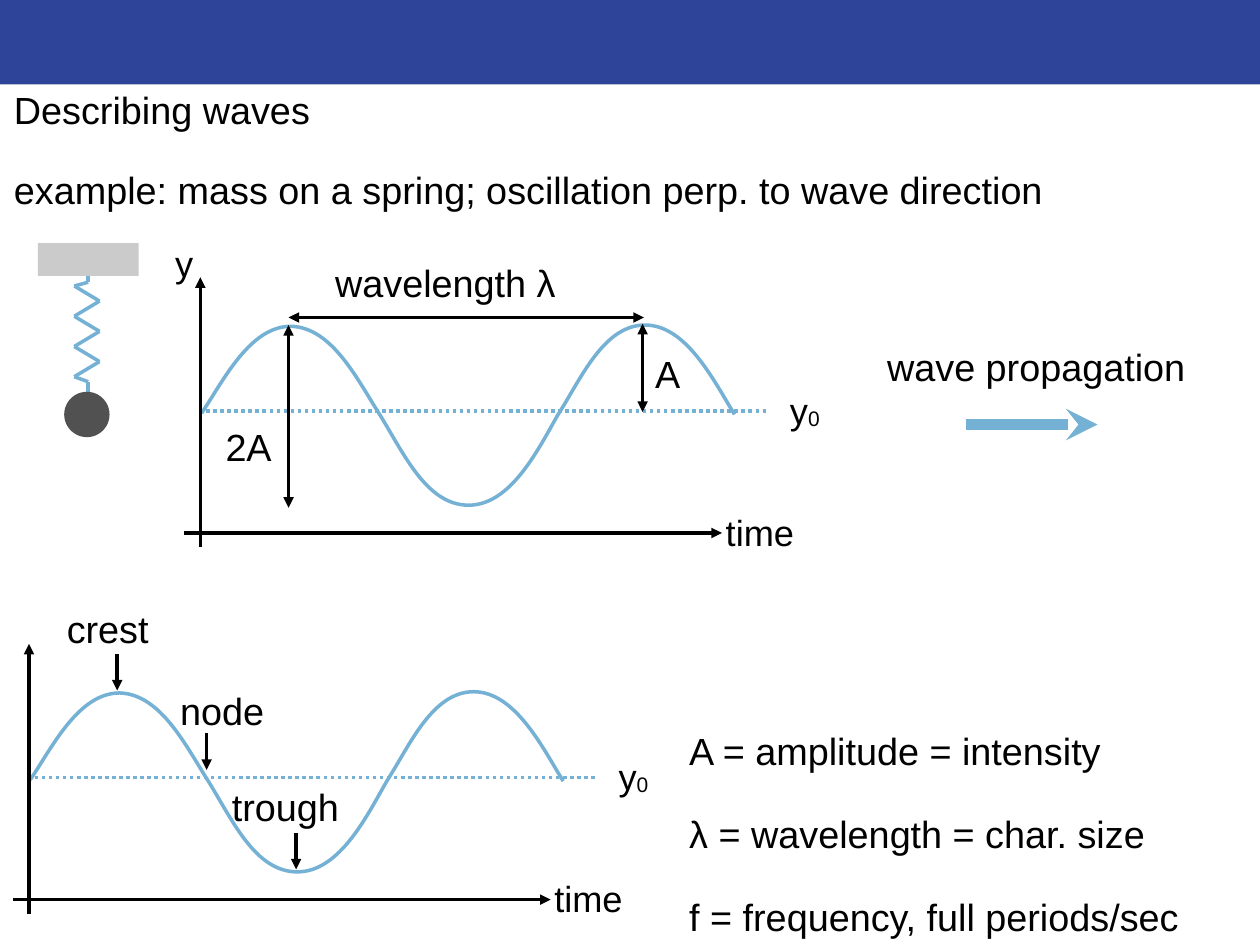
from dataclasses import dataclass
from itertools import pairwise

from lxml.etree import SubElement
from pptx import Presentation
from pptx.dml.color import RGBColor
from pptx.enum.dml import MSO_LINE
from pptx.enum.shapes import MSO_CONNECTOR, MSO_SHAPE
from pptx.enum.text import MSO_ANCHOR, MSO_AUTO_SIZE, PP_ALIGN
from pptx.oxml.ns import qn
from pptx.util import Inches, Pt

BLACK = RGBColor(0x00, 0x00, 0x00)
NAVY = RGBColor(0x2E, 0x44, 0x99)
SKY = RGBColor(0x75, 0xB1, 0xD4)
DARK_GREY = RGBColor(0x51, 0x51, 0x51)
LIGHT_GREY = RGBColor(0xCB, 0xCB, 0xCB)
FONT = "Arial"
TEXT_SIZE = 21.6
AXIS_SIZE = 20.7
WAVE = [
    (0.01, 1.08), (0.18, 0.83), (0.39, 0.39), (0.72, 0.39),
    (1.05, 0.40), (1.25, 0.82), (1.43, 1.10),
    (1.62, 1.41), (1.80, 1.81), (2.13, 1.81),
    (2.47, 1.81), (2.69, 1.35), (2.84, 1.09),
    (3.02, 0.81), (3.20, 0.38), (3.53, 0.38),
    (3.86, 0.38), (4.08, 0.83), (4.24, 1.09),
]


@dataclass
class Label:
    text: str
    left: float
    top: float
    width: float
    height: float = 0.44
    size: float = TEXT_SIZE
    subscript: str = ""
    gap: float = 0


@dataclass
class Arrow:
    start: tuple[float, float]
    end: tuple[float, float]
    color: RGBColor = BLACK
    width: float = 2
    head: str = ""
    tail: str = ""
    dash: MSO_LINE | None = None


@dataclass
class Marker:
    label: Label
    tip: tuple[float, float]


def format_text(frame, size: float, gap: float = 0) -> None:
    frame.margin_left = frame.margin_right = Inches(0.04)
    frame.margin_top = frame.margin_bottom = Inches(0.04)
    frame.vertical_anchor = MSO_ANCHOR.MIDDLE
    for index, paragraph in enumerate(frame.paragraphs):
        paragraph.alignment = PP_ALIGN.LEFT
        paragraph.space_before = Pt(gap if index else 0)
        for run in paragraph.runs:
            run.font.name = FONT
            run.font.size = Pt(size)
            run.font.color.rgb = BLACK


def draw_label(slide, label: Label) -> None:
    box = slide.shapes.add_textbox(
        Inches(label.left), Inches(label.top), Inches(label.width), Inches(label.height)
    )
    frame = box.text_frame
    frame.text = label.text
    frame.word_wrap = False
    frame.auto_size = MSO_AUTO_SIZE.SHAPE_TO_FIT_TEXT
    if label.subscript:
        subscript = frame.paragraphs[0].add_run()
        subscript.text = label.subscript
        subscript._r.get_or_add_rPr().set("baseline", "-6000")
    format_text(frame, label.size, label.gap)


def draw_arrow(slide, arrow: Arrow) -> None:
    connector = slide.shapes.add_connector(
        MSO_CONNECTOR.STRAIGHT, *(Inches(v) for v in (*arrow.start, *arrow.end))
    )
    line = connector.line
    line.color.rgb = arrow.color
    line.width = Pt(arrow.width)
    if arrow.dash is not None:
        line.dash_style = arrow.dash
    properties = connector._element.spPr
    outline = properties.find(qn("a:ln"))
    for tag, kind in (("a:headEnd", arrow.head), ("a:tailEnd", arrow.tail)):
        if kind:
            SubElement(outline, qn(tag)).set("type", kind)
    SubElement(properties, qn("a:effectLst"))


def draw_block(slide, kind: MSO_SHAPE, left: float, top: float,
               width: float, height: float, color: RGBColor) -> None:
    block = slide.shapes.add_shape(
        kind, Inches(left), Inches(top), Inches(width), Inches(height)
    )
    block.fill.solid()
    block.fill.fore_color.rgb = color
    block.line.fill.background()
    block.shadow.inherit = False


def draw_wave(slide, left: float, top: float) -> None:
    start, *controls = [(Inches(left + x), Inches(top + y)) for x, y in WAVE]
    builder = slide.shapes.build_freeform(*start)
    builder.add_line_segments(controls, close=False)
    wave = builder.convert_to_shape()
    segments = list(wave._element.iter(qn("a:lnTo")))
    outline = segments[0].getparent()
    for first in range(0, len(segments), 3):
        curve = SubElement(outline, qn("a:cubicBezTo"))
        for segment in segments[first:first + 3]:
            curve.append(segment[0])
            outline.remove(segment)
    wave.fill.background()
    wave.line.color.rgb = SKY
    wave.line.width = Pt(2)
    wave.shadow.inherit = False


def draw_graph(slide, left: float, top: float) -> None:
    draw_wave(slide, left, top)
    rest_y, time_y = top + 1.06, top + 2.03
    draw_arrow(slide, Arrow((left - 0.01, rest_y), (left + 4.51, rest_y), SKY,
                            dash=MSO_LINE.ROUND_DOT))
    draw_arrow(slide, Arrow((left, top), (left, top + 2.14), head="triangle"))
    draw_arrow(slide, Arrow((left + 4.14, time_y), (left - 0.13, time_y), head="triangle"))
    draw_label(slide, Label("time", left + 4.13, top + 1.81, 0.66, 0.42, AXIS_SIZE))
    draw_label(slide, Label("y", left + 4.64, top + 0.84, 0.33, 0.42, AXIS_SIZE, "0"))


def draw_spring(slide) -> None:
    zigzag = [(0.79 if turn % 2 else 0.59, 2.27 + turn * 0.12) for turn in range(7)]
    spring = [(0.7, 2.14), (0.7, 2.24), *zigzag, (0.7, 3.03), (0.7, 3.13)]
    for start, end in pairwise(spring):
        draw_arrow(slide, Arrow(start, end, SKY))
    draw_block(slide, MSO_SHAPE.OVAL, 0.51, 3.11, 0.36, 0.36, DARK_GREY)
    draw_block(slide, MSO_SHAPE.RECTANGLE, 0.3, 1.93, 0.8, 0.26, LIGHT_GREY)


def main() -> None:
    deck = Presentation()
    deck.slide_width, deck.slide_height = Inches(10), Inches(7.5)
    slide = deck.slides.add_slide(deck.slide_layouts[5])
    draw_block(slide, MSO_SHAPE.RECTANGLE, -0.01, 0, 10.02, 0.67, NAVY)

    title = slide.shapes.title
    title.left, title.top = Inches(0.07), Inches(0.64)
    title.width, title.height = Inches(9.83), Inches(1.09)
    heading = title.text_frame
    heading.text = (
        "Describing waves\nexample: mass on a spring; oscillation perp. to wave direction"
    )
    heading.word_wrap = True
    heading.auto_size = MSO_AUTO_SIZE.NONE
    format_text(heading, TEXT_SIZE, 20.2)

    draw_spring(slide)
    draw_graph(slide, 1.59, 2.2)
    draw_graph(slide, 0.23, 5.11)

    for start, end in (
        ((2.29, 2.58), (2.29, 4.03)),
        ((5.1, 2.57), (5.1, 3.27)),
        ((2.29, 2.52), (5.11, 2.52)),
    ):
        draw_arrow(slide, Arrow(start, end, head="triangle", tail="triangle"))

    for marker in (
        Marker(Label("crest", 0.49, 4.77, 0.77), (0.93, 5.48)),
        Marker(Label("node", 1.39, 5.42, 0.77), (1.64, 6.11)),
        Marker(Label("trough", 1.8, 6.18, 0.97), (2.35, 6.9)),
    ):
        x, y = marker.tip
        draw_arrow(slide, Arrow(marker.tip, (x, y - 0.29), head="triangle"))
        draw_label(slide, marker.label)

    definitions = "\n".join((
        "A = amplitude = intensity",
        "λ = wavelength = char. size",
        "f = frequency, full periods/sec",
    ))
    for label in (
        Label("y", 1.35, 1.88, 0.22, 0.42, AXIS_SIZE),
        Label("2A", 1.75, 3.32, 0.46),
        Label("A", 5.16, 2.74, 0.28),
        Label("wavelength λ", 2.62, 2.02, 1.86),
        Label(definitions, 5.43, 5.73, 4.02, 1.77, gap=21.6),
        Label("wave propagation", 7, 2.69, 2.49),
    ):
        draw_label(slide, label)
    draw_arrow(slide, Arrow((8.71, 3.37), (7.67, 3.37), SKY, 6, head="stealth"))

    deck.save("out.pptx")


if __name__ == "__main__":
    main()
